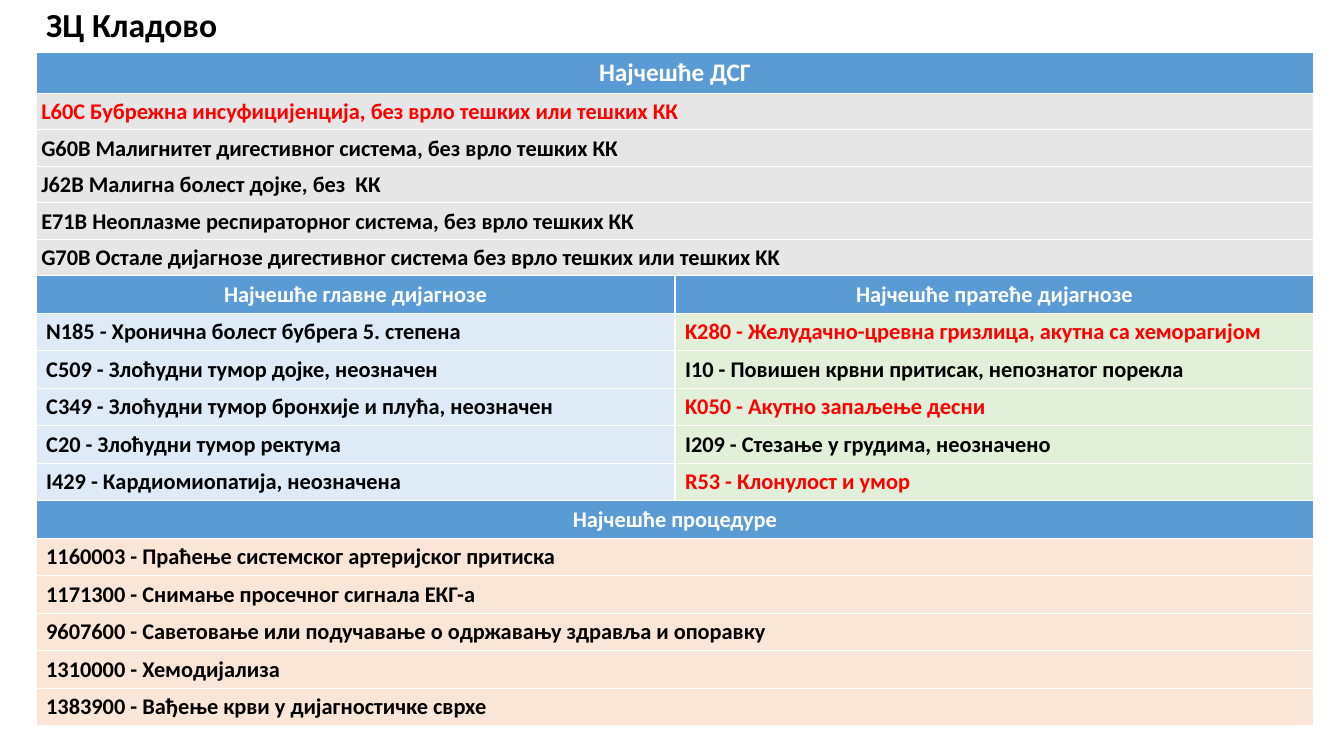
import pptx
import pptx.util
import pptx.dml.color
import pptx.enum.text

Cm = pptx.util.Cm
Pt = pptx.util.Pt
ALIGN = pptx.enum.text.PP_ALIGN
ANCHOR = pptx.enum.text.MSO_ANCHOR

COLORS = {
    "black": "000000",
    "white": "FFFFFF",
    "red": "FF0000",
    "header": "5B9BD5",
    "group": "E7E6E6",
    "main": "DEEBF7",
    "secondary": "E2F0D9",
    "procedure": "FBE5D6",
}

GROUPS = [
    "L60C Бубрежна инсуфицијенција, без врло тешких или тешких КК",
    "G60B Малигнитет дигестивног система, без врло тешких КК",
    "J62B Малигна болест дојке, без  КК",
    "E71B Неоплазмe респираторног система, без врло тешких КК",
    "G70B Остале дијагнозе дигестивног система без врло тешких или тешких KK",
]
MAIN_DIAGNOSES = [
    "N185 - Хронична болест бубрега 5. степена",
    "C509 - Злоћудни тумор дојке, неозначен",
    "C349 - Злоћудни тумор бронхије и плућа, неозначен",
    "C20 - Злоћудни тумор ректума",
    "I429 - Кардиомиопатија, неозначена",
]
SECONDARY_DIAGNOSES = [
    "K280 - Желудачно-цревна гризлица, акутна са хеморагијом",
    "I10 - Повишен крвни притисак, непознатог порекла",
    "K050 - Акутно запаљење десни",
    "I209 - Стезање у грудима, неозначено",
    "R53 - Клонулост и умор",
]
PROCEDURES = [
    "1160003 - Праћење системског артеријског притиска",
    "1171300 - Снимање просечног сигнала ЕКГ-а",
    "9607600 - Саветовање или подучавање о одржавању здравља и опоравку",
    "1310000 - Хемодијализа",
    "1383900 - Вађење крви у дијагностичке сврхе",
]
HIGHLIGHTED = {"L60C", "K280", "K050", "R53"}


def rgb(name):
    """Return the named colour."""
    return pptx.dml.color.RGBColor.from_string(COLORS[name])


def style_paragraph(para, size, color, align=ALIGN.LEFT):
    """Set the bold font and alignment of a paragraph."""
    para.alignment = align
    para.font.name = "Calibri"
    para.font.size = Pt(size)
    para.font.bold = True
    para.font.color.rgb = rgb(color)


def add_title(page, text):
    """Place and format the slide title."""
    box = page.shapes.title
    box.left, box.top, box.width, box.height = Cm(0.91), Cm(-0.41), Cm(30.33), Cm(2.18)
    box.text_frame.text = text
    box.text_frame.vertical_anchor = ANCHOR.MIDDLE
    para = box.text_frame.paragraphs[0]
    para.line_spacing = 0.9
    style_paragraph(para, 24, "black")


def fill_cell(cell, text, fill):
    """Write an entry on its background, red when its code is highlighted."""
    cell.text = text
    cell.fill.solid()
    cell.fill.fore_color.rgb = rgb(fill)
    color = "red" if text.split()[0] in HIGHLIGHTED else "black"
    style_paragraph(cell.text_frame.paragraphs[0], 16, color)


def fill_header(cell, text, size=16):
    """Write a centred white heading."""
    fill_cell(cell, text, "header")
    style_paragraph(cell.text_frame.paragraphs[0], size, "white", ALIGN.CENTER)


def tighten(cell):
    """Give a cell narrow margins and centre its text vertically."""
    cell.margin_left = Cm(0.13)
    cell.margin_right = cell.margin_top = Cm(0.02)
    cell.margin_bottom = 0
    cell.vertical_anchor = ANCHOR.MIDDLE


def add_overview(page):
    """Add the table of groups, diagnoses and procedures."""
    frame = page.shapes.add_table(18, 2, Cm(0.91), Cm(1.32), Cm(32.2), Cm(16.56))
    table = frame.table
    table.horz_banding = False
    for row in table.rows:
        row.height = Cm(0.92)
    for index in [*range(6), *range(12, 18)]:
        table.cell(index, 0).merge(table.cell(index, 1))

    fill_header(table.cell(0, 0), "Најчешће ДСГ", 18)
    fill_header(table.cell(6, 0), "Најчешће главне дијагнозе")
    fill_header(table.cell(6, 1), "Најчешће пратеће дијагнозе")
    fill_header(table.cell(12, 0), "Најчешће процедуре")

    blocks = [
        (1, 0, GROUPS, "group"),
        (7, 0, MAIN_DIAGNOSES, "main"),
        (7, 1, SECONDARY_DIAGNOSES, "secondary"),
        (13, 0, PROCEDURES, "procedure"),
    ]
    for first, column, entries, fill in blocks:
        for index, text in enumerate(entries, first):
            cell = table.cell(index, column)
            fill_cell(cell, text, fill)
            if fill == "group":
                tighten(cell)


def main():
    """Build and save the slide."""
    deck = pptx.Presentation()
    deck.slide_width, deck.slide_height = Cm(33.87), Cm(19.05)
    page = deck.slides.add_slide(deck.slide_layouts[5])
    add_title(page, "ЗЦ Кладово")
    add_overview(page)
    deck.save("out.pptx")


if __name__ == "__main__":
    main()
